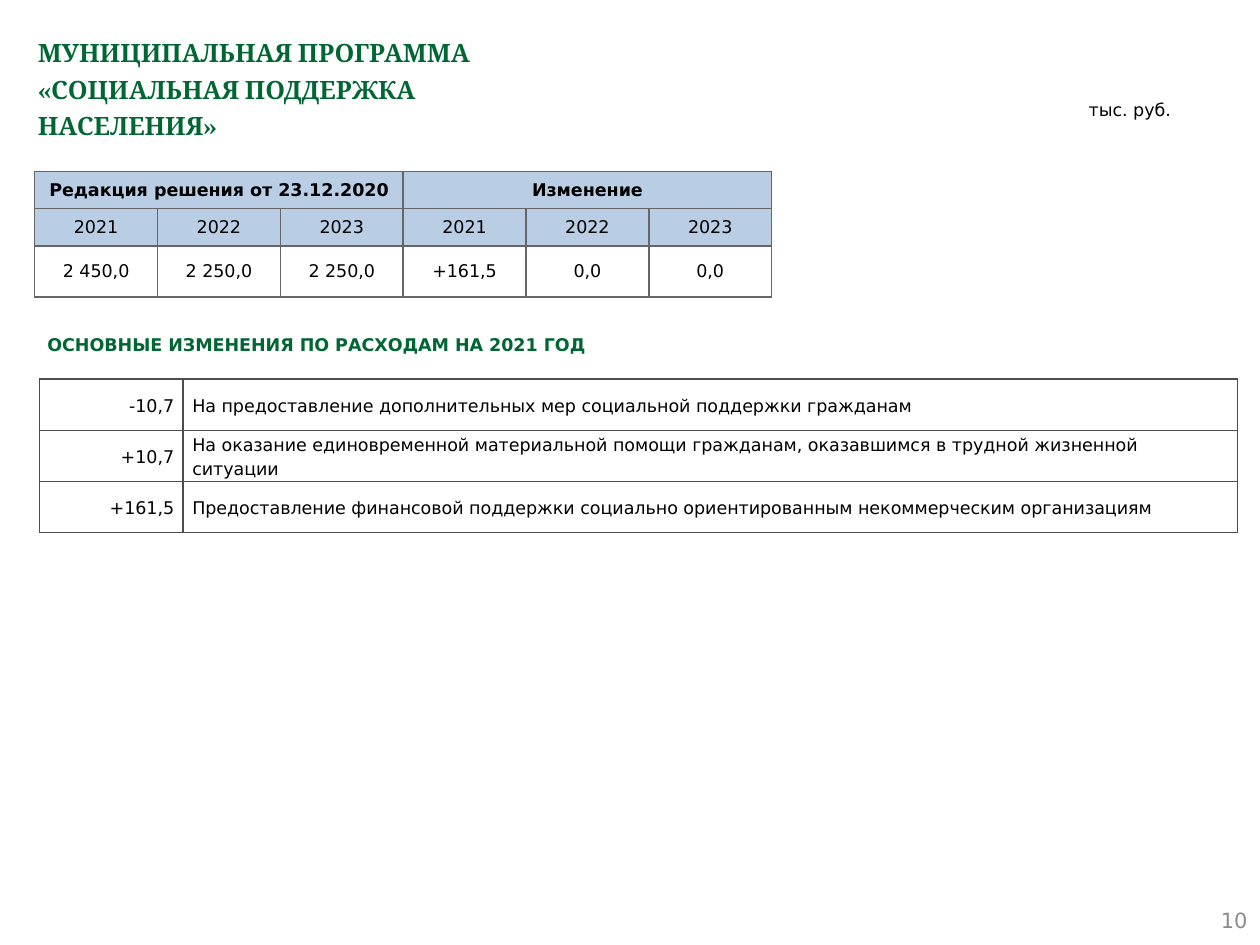
from lxml import etree
from pptx import Presentation
from pptx.dml.color import RGBColor
from pptx.enum.shapes import MSO_SHAPE
from pptx.enum.text import MSO_ANCHOR, MSO_AUTO_SIZE, PP_ALIGN
from pptx.oxml.ns import qn
from pptx.util import Pt

GREEN = RGBColor(0x00, 0x66, 0x33)
BLACK = RGBColor(0x00, 0x00, 0x00)
GRAY = RGBColor(0x8C, 0x8C, 0x8C)
BLUE = RGBColor(0xB9, 0xCD, 0xE5)
DARK = RGBColor(0x4D, 0x4D, 0x4D)
MID = RGBColor(0x66, 0x66, 0x66)

LEFT, CENTER, RIGHT = PP_ALIGN.LEFT, PP_ALIGN.CENTER, PP_ALIGN.RIGHT
TOP, MIDDLE = MSO_ANCHOR.TOP, MSO_ANCHOR.MIDDLE
PLATE = MSO_SHAPE.PENTAGON
NOFIT = MSO_AUTO_SIZE.NONE

TITLE = ["МУНИЦИПАЛЬНАЯ ПРОГРАММА", "«СОЦИАЛЬНАЯ ПОДДЕРЖКА", "НАСЕЛЕНИЯ»"]
GROUPS = ["Редакция решения от 23.12.2020", "Изменение"]
YEARS = ["2021", "2022", "2023"]
SUMS = ["2 450,0", "2 250,0", "2 250,0", "+161,5", "0,0", "0,0"]
COSTS = [
    ("-10,7", "На предоставление дополнительных мер социальной поддержки гражданам"),
    ("+10,7", "На оказание единовременной материальной помощи гражданам, "
              "оказавшимся в трудной жизненной ситуации"),
    ("+161,5", "Предоставление финансовой поддержки социально ориентированным "
               "некоммерческим организациям"),
]


class Deck:
    def __init__(self, font, head):
        self.font, self.head = font, head
        self.prs = Presentation()
        self.prs.slide_width, self.prs.slide_height = Pt(720), Pt(540)
        self.slide = self.prs.slides.add_slide(self.prs.slide_layouts[5])

    def put(self, frame, lines, size=10, color=BLACK, bold=False,
            align=LEFT, space=1.0, after=0, font=None):
        """Put the lines into one paragraph, split by line breaks."""
        para = frame.paragraphs[0]
        para.alignment, para.line_spacing = align, space
        para.space_before, para.space_after = Pt(0), Pt(after)
        for i, line in enumerate(lines):
            if i:
                para.add_line_break()
            run = para.add_run()
            run.text = line
            run.font.name = font or self.font
            run.font.size, run.font.bold = Pt(size), bold
            run.font.color.rgb = color

    def title(self, box, lines):
        shape = self.slide.shapes.title
        shape.left, shape.top, shape.width, shape.height = map(Pt, box)
        frame = shape.text_frame
        frame.word_wrap, frame.auto_size = True, NOFIT
        frame.vertical_anchor = TOP
        self.put(frame, lines, 14.4, GREEN, True, space=1.2, font=self.head)

    def text(self, box, line, anchor=TOP, **style):
        frame = self.slide.shapes.add_textbox(*map(Pt, box)).text_frame
        frame.word_wrap, frame.vertical_anchor = True, anchor
        self.put(frame, [line], **style)

    def plate(self, box, line, **style):
        shape = self.slide.shapes.add_shape(PLATE, *map(Pt, box))
        shape.adjustments[0] = 0
        shape.shadow.inherit = False
        shape.fill.background()
        shape.line.fill.background()
        shape.text_frame.word_wrap = True
        shape.text_frame.vertical_anchor = MIDDLE
        self.put(shape.text_frame, [line], **style)

    def table(self, left, top, cols, rows, edge):
        """Add an empty table with plain cells and thin borders."""
        frame = self.slide.shapes.add_table(
            len(rows), len(cols), Pt(left), Pt(top), Pt(sum(cols)), Pt(sum(rows)))
        grid = frame.table
        grid.first_row = grid.horz_banding = False
        for col, width in zip(grid.columns, cols):
            col.width = Pt(width)
        for row, height in zip(grid.rows, rows):
            row.height = Pt(height)
        for cell in grid.iter_cells():
            self.border(cell, edge)
            cell.fill.background()
        return grid

    def border(self, cell, color):
        props = cell._tc.get_or_add_tcPr()
        for side in ("lnL", "lnR", "lnT", "lnB"):
            line = etree.SubElement(props, qn("a:" + side), w=str(Pt(1)))
            fill = etree.SubElement(line, qn("a:solidFill"))
            etree.SubElement(fill, qn("a:srgbClr"), val=str(color))

    def cell(self, cell, line, inset, fill=None, **style):
        cell.margin_left = cell.margin_right = Pt(inset[0])
        cell.margin_top = cell.margin_bottom = Pt(inset[1])
        cell.vertical_anchor = MIDDLE
        if fill:
            cell.fill.solid()
            cell.fill.fore_color.rgb = fill
        self.put(cell.text_frame, [line], **style)


def main():
    deck = Deck("DejaVu Sans", "Cambria")
    deck.title((14.4, 14.4, 692, 57), TITLE)
    deck.text((552, 511, 168, 29), "10", MIDDLE, size=12, color=GRAY, align=RIGHT)
    deck.plate((20, 178, 376, 37.5), "ОСНОВНЫЕ ИЗМЕНЕНИЯ ПО РАСХОДАМ НА 2021 ГОД",
               color=GREEN, bold=True)

    costs = deck.table(22.5, 216.7, [82.2, 602.4], [29.2] * 3, DARK)
    for r, row in enumerate(COSTS):
        for c, (line, align) in enumerate(zip(row, (RIGHT, LEFT))):
            deck.cell(costs.cell(r, c), line, (5.2, 0), align=align,
                      space=1.15, after=10)

    deck.text((615, 50.4, 72.7, 21.6), "тыс. руб.", space=1.2)

    sums = deck.table(19.8, 97.9, [70.2] * 6, [21.4, 21.4, 29.2], MID)
    inset, span = (3.6, 3.6), len(YEARS)
    for i, name in enumerate(GROUPS):
        first = sums.cell(0, i * span)
        first.merge(sums.cell(0, i * span + span - 1))
        deck.cell(first, name, inset, BLUE, bold=True, align=CENTER)
    for c, (year, value) in enumerate(zip(YEARS * len(GROUPS), SUMS)):
        deck.cell(sums.cell(1, c), year, inset, BLUE, align=CENTER)
        deck.cell(sums.cell(2, c), value, inset, align=CENTER)

    deck.prs.save("out.pptx")


if __name__ == "__main__":
    main()
